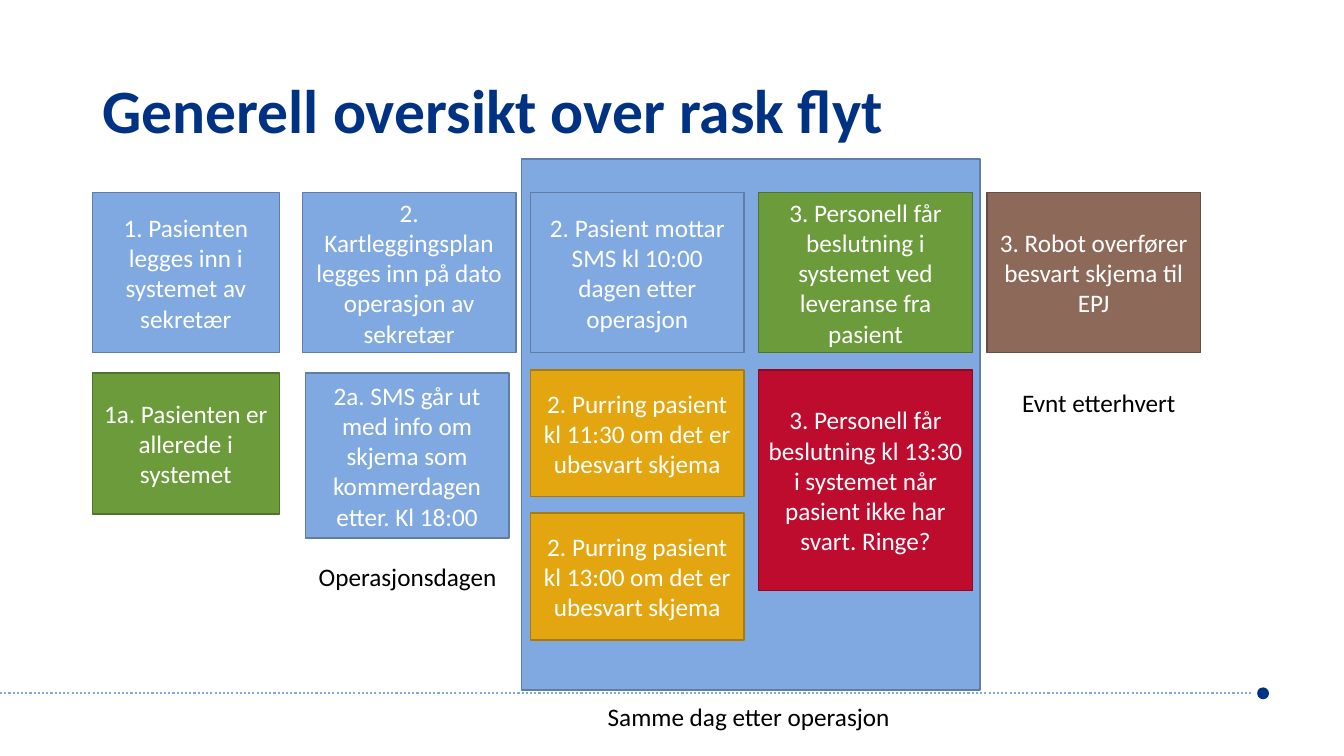
"""Build a slide that outlines a fast patient flow."""
from pptx import Presentation
from pptx.dml.color import RGBColor
from pptx.enum.dml import MSO_LINE
from pptx.enum.shapes import MSO_CONNECTOR, MSO_SHAPE
from pptx.enum.text import MSO_ANCHOR as Anchor, MSO_AUTO_SIZE as AutoSize, PP_ALIGN as Align
from pptx.oxml.ns import qn
from pptx.util import Pt
from lxml.etree import SubElement

NAVY = RGBColor(0x00, 0x32, 0x83)
WHITE = RGBColor(0xFF, 0xFF, 0xFF)
BLACK = RGBColor(0x00, 0x00, 0x00)
BLUE = RGBColor(0x81, 0xA9, 0xE1)
BLUE_EDGE = RGBColor(0x5F, 0x7D, 0xA6)
GREEN = RGBColor(0x6B, 0x9B, 0x3A)
GREEN_EDGE = RGBColor(0x4F, 0x73, 0x2B)
AMBER = RGBColor(0xE3, 0xA6, 0x10)
AMBER_EDGE = RGBColor(0xA8, 0x7B, 0x0C)
RED = RGBColor(0xBD, 0x0C, 0x2E)
RED_EDGE = RGBColor(0x8C, 0x09, 0x22)
BROWN = RGBColor(0x8D, 0x69, 0x59)
BROWN_EDGE = RGBColor(0x68, 0x4E, 0x42)

BLUE_PAIR = (BLUE, BLUE_EDGE)
GREEN_PAIR = (GREEN, GREEN_EDGE)
AMBER_PAIR = (AMBER, AMBER_EDGE)
RED_PAIR = (RED, RED_EDGE)
BROWN_PAIR = (BROWN, BROWN_EDGE)

FIRST_LEFT, FIRST_WIDTH = 66, 133.5
STEP_WIDTH = 152.5
PLAN, PATIENT, STAFF, ROBOT = [216 + 163 * column for column in range(4)]
TOP_ROW, TOP_HEIGHT = 137.5, 114.5
SECOND_ROW, FOLLOW_UP_ROW = 266.4, 264.2
REMINDER_HEIGHT, REMINDER_PITCH = 90.7, 102.3

STEPS = [
    ("1. Pasienten legges inn i systemet av sekretær",
     FIRST_LEFT, TOP_ROW, FIRST_WIDTH, TOP_HEIGHT, BLUE_PAIR),
    ("1a. Pasienten er allerede i systemet",
     FIRST_LEFT, SECOND_ROW, FIRST_WIDTH, 100.8, GREEN_PAIR),
    ("2. Kartleggingsplan legges inn på dato operasjon av sekretær",
     PLAN, TOP_ROW, STEP_WIDTH, TOP_HEIGHT, BLUE_PAIR),
    ("2a. SMS går ut med info om skjema som kommerdagen etter. Kl 18:00",
     PLAN + 2, SECOND_ROW, 145.5, 118, BLUE_PAIR),
    ("2. Pasient mottar SMS kl 10:00 dagen etter operasjon",
     PATIENT, TOP_ROW, STEP_WIDTH, TOP_HEIGHT, BLUE_PAIR),
    ("2. Purring pasient kl 11:30 om det er ubesvart skjema",
     PATIENT, FOLLOW_UP_ROW, STEP_WIDTH, REMINDER_HEIGHT, AMBER_PAIR),
    ("2. Purring pasient kl 13:00 om det er ubesvart skjema",
     PATIENT, FOLLOW_UP_ROW + REMINDER_PITCH, STEP_WIDTH, REMINDER_HEIGHT, AMBER_PAIR),
    ("3. Personell får beslutning i systemet ved leveranse fra pasient",
     STAFF, TOP_ROW, STEP_WIDTH, TOP_HEIGHT, GREEN_PAIR),
    ("3. Personell får beslutning kl 13:30 i systemet når pasient ikke har svart. Ringe?",
     STAFF, FOLLOW_UP_ROW, STEP_WIDTH, 157.7, RED_PAIR),
    ("3. Robot overfører besvart skjema til EPJ",
     ROBOT, TOP_ROW, STEP_WIDTH, TOP_HEIGHT, BROWN_PAIR),
]

LABELS = [
    ("Samme dag etter operasjon", 427, 497.5, 219),
    ("Evnt etterhvert", 723, 272.9, 125),
    ("Operasjonsdagen", 220.5, 397.5, 142.5),
]


def write_text(frame, text, size=18, color=BLACK, bold=False, align=Align.LEFT,
               anchor=Anchor.TOP, wrap=True, fit=AutoSize.NONE, spacing=None):
    """Write one formatted paragraph into a text frame."""
    frame.word_wrap = wrap
    frame.auto_size = fit
    frame.vertical_anchor = anchor
    para = frame.paragraphs[0]
    para.alignment = align
    para.line_spacing = spacing
    span = para.add_run()
    span.text = text
    span.font.name = "Calibri"
    span.font.size = Pt(size)
    span.font.bold = bold
    span.font.color.rgb = color


def place(left, top, width, height):
    """Turn a frame given in points into lengths."""
    return Pt(left), Pt(top), Pt(width), Pt(height)


def add_box(page, left, top, width, height, fill, edge=None, kind=MSO_SHAPE.RECTANGLE):
    """Add a flat filled shape, outlined when an edge colour is given."""
    box = page.shapes.add_shape(kind, *place(left, top, width, height))
    box.shadow.inherit = False
    box.fill.solid()
    box.fill.fore_color.rgb = fill
    if edge is None:
        box.line.fill.background()
    else:
        box.line.color.rgb = edge
        box.line.width = Pt(1)
    return box


def add_step(page, text, left, top, width, height, colors):
    """Add a coloured box with centred white text."""
    box = add_box(page, left, top, width, height, *colors)
    write_text(box.text_frame, text, color=WHITE, align=Align.CENTER, anchor=Anchor.MIDDLE)


def add_label(page, text, left, top, width):
    """Add a one-line caption."""
    box = page.shapes.add_textbox(*place(left, top, width, 29))
    write_text(box.text_frame, text, wrap=False, fit=AutoSize.SHAPE_TO_FIT_TEXT)


def add_baseline(page):
    """Add the dotted line that ends in a dot."""
    line = page.shapes.add_connector(MSO_CONNECTOR.STRAIGHT, Pt(0), Pt(495), Pt(894), Pt(495))
    line.line.color.rgb = BLUE
    line.line.width = Pt(1.5)
    line.line.dash_style = MSO_LINE.ROUND_DOT
    SubElement(line._element.spPr, qn("a:effectLst"))
    add_box(page, 898, 491, 8.5, 8.5, NAVY, kind=MSO_SHAPE.OVAL)


def add_title(page, text):
    """Place and fill the title placeholder."""
    title = page.shapes.title
    title.left, title.top, title.width, title.height = place(66, 28.75, 828, 104.4)
    write_text(title.text_frame, text, size=44, color=NAVY, bold=True,
               anchor=Anchor.MIDDLE, spacing=0.9)


def main():
    """Build and save the deck."""
    deck = Presentation()
    deck.slide_width, deck.slide_height = Pt(960), Pt(540)
    page = deck.slides.add_slide(deck.slide_layouts[5])
    add_title(page, "Generell oversikt over rask flyt")
    add_baseline(page)
    add_box(page, 372.5, 113.5, 327.5, 379.5, *BLUE_PAIR)
    for step in STEPS:
        add_step(page, *step)
    for label in LABELS:
        add_label(page, *label)
    deck.save("out.pptx")


if __name__ == "__main__":
    main()
